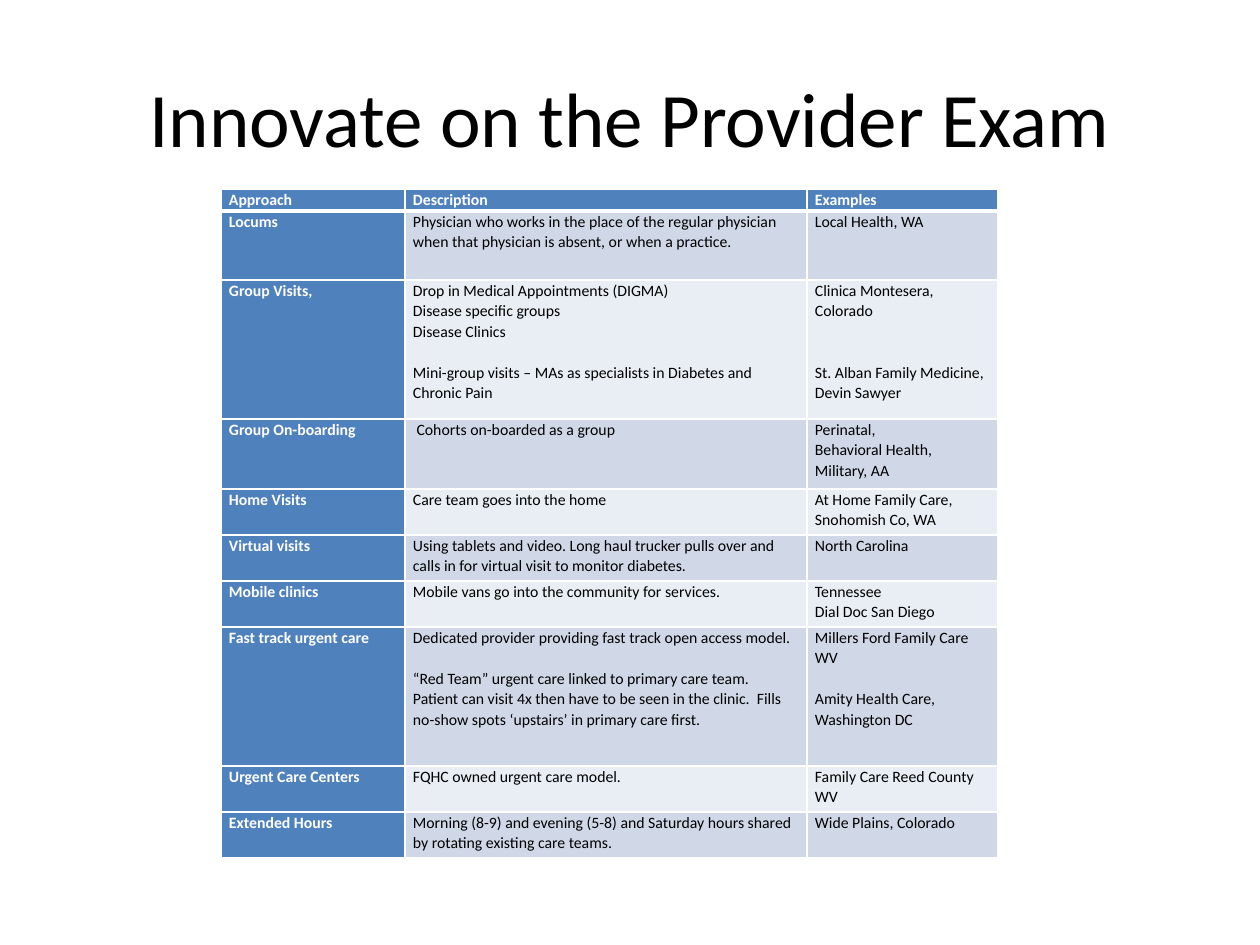
from lxml import etree
from pptx import Presentation
from pptx import util as u
from pptx.dml.color import RGBColor
from pptx.enum import text
from pptx.oxml import ns

TITLE = "Innovate on the Provider Exam"
HEADINGS = ["Approach", "Description", "Examples"]
# Each approach: name, description paragraphs, example paragraphs.
# A (text, lines) pair leaves that many lines free above the paragraph.
APPROACHES = [
    ("Locums",
     ["Physician who works in the place of the regular physician when that "
      "physician is absent, or when a practice."],
     ["Local Health, WA"]),
    ("Group Visits,",
     ["Drop in Medical Appointments (DIGMA)", "Disease specific groups", "Disease Clinics",
      ("Mini-group visits – MAs as specialists in Diabetes and Chronic Pain", 1)],
     ["Clinica Montesera, Colorado", ("St. Alban Family Medicine, Devin Sawyer", 2)]),
    ("Group On-boarding",
     [" Cohorts on-boarded as a group"],
     ["Perinatal,", "Behavioral Health,", "Military, AA"]),
    ("Home Visits",
     ["Care team goes into the home"],
     ["At Home Family Care, Snohomish Co, WA"]),
    ("Virtual visits",
     ["Using tablets and video. Long haul trucker pulls over and "
      "calls in for virtual visit to monitor diabetes."],
     ["North Carolina"]),
    ("Mobile clinics",
     ["Mobile vans go into the community for services."],
     ["Tennessee", "Dial Doc San Diego"]),
    ("Fast track urgent care",
     ["Dedicated provider providing fast track open access model.",
      ("“Red Team” urgent care linked to primary care team.  Patient can visit 4x "
       "then have to be seen in the clinic.  Fills no-show spots ‘upstairs’ in "
       "primary care first.", 1)],
     ["Millers Ford Family Care WV", ("Amity Health Care, Washington DC", 1)]),
    ("Urgent Care Centers",
     ["FQHC owned urgent care model."],
     ["Family Care Reed County WV"]),
    ("Extended Hours",
     ["Morning (8-9) and evening (5-8) and Saturday hours shared by rotating "
      "existing care teams."],
     ["Wide Plains, Colorado"]),
]

COLUMN_WIDTHS = [184, 402, 191]
ROW_HEIGHTS = [22, 69, 139, 70, 46, 46, 46, 139, 46, 46]
TABLE_LEFT, TABLE_TOP = 221, 189
TITLE_BOX = (63, 38, 1134, 158)
CELL_MARGIN = 8
LINE_POINTS = 11.75

FONT = "Calibri"
BLACK = RGBColor(0x00, 0x00, 0x00)
WHITE = RGBColor(0xFF, 0xFF, 0xFF)
BLUE = RGBColor(0x4F, 0x81, 0xBD)
BANDS = [RGBColor(0xD0, 0xD8, 0xE8), RGBColor(0xE9, 0xED, 0xF4)]


def px(length):
    return u.Emu(round(length * 914400 / 126))


def set_font(paragraph, size, color, bold=False):
    font = paragraph.font
    font.name, font.size, font.bold = FONT, u.Pt(size), bold
    font.color.rgb = color


def add_borders(cell, bottom):
    properties = cell._tc.get_or_add_tcPr()
    widths = {"lnL": 1, "lnR": 1, "lnT": 1, "lnB": bottom}
    for place, (tag, width) in enumerate(widths.items()):
        line = etree.Element(ns.qn(f"a:{tag}"), w=str(u.Pt(width)))
        fill = etree.SubElement(line, ns.qn("a:solidFill"))
        etree.SubElement(fill, ns.qn("a:srgbClr"), val=str(WHITE))
        properties.insert(place, line)


def fill_cell(cell, paragraphs, row, column):
    is_heading = row == 0 or column == 0
    cell.margin_left = cell.margin_right = px(CELL_MARGIN)
    cell.margin_top = cell.margin_bottom = 0
    cell.fill.solid()
    cell.fill.fore_color.rgb = BLUE if is_heading else BANDS[(row - 1) % 2]
    add_borders(cell, bottom=3 if row == 0 else 1)
    for index, entry in enumerate(paragraphs):
        wording, gap = entry if isinstance(entry, tuple) else (entry, 0)
        frame = cell.text_frame
        para = frame.add_paragraph() if index else frame.paragraphs[0]
        para.text = wording
        para.line_spacing = 1.07
        para.space_before = u.Pt(gap * LINE_POINTS)
        set_font(para, 9, WHITE if is_heading else BLACK, is_heading)


def add_title(page):
    title = page.shapes.title
    title.left, title.top, title.width, title.height = map(px, TITLE_BOX)
    title.text_frame.text = TITLE
    title.text_frame.vertical_anchor = text.MSO_ANCHOR.MIDDLE
    para = title.text_frame.paragraphs[0]
    para.alignment = text.PP_ALIGN.CENTER
    set_font(para, 44, BLACK)


def add_approaches(page):
    rows = [[[heading] for heading in HEADINGS]]
    rows += [[[name], description, examples] for name, description, examples in APPROACHES]
    table = page.shapes.add_table(
        len(rows), len(HEADINGS), px(TABLE_LEFT), px(TABLE_TOP),
        px(sum(COLUMN_WIDTHS)), px(sum(ROW_HEIGHTS))).table
    table.first_col = True
    for column, width in zip(table.columns, COLUMN_WIDTHS):
        column.width = px(width)
    for row, height in zip(table.rows, ROW_HEIGHTS):
        row.height = px(height)
    for r, cells in enumerate(rows):
        for c, paragraphs in enumerate(cells):
            fill_cell(table.cell(r, c), paragraphs, r, c)


def main():
    deck = Presentation()
    deck.slide_width, deck.slide_height = px(1260), px(945)
    page = deck.slides.add_slide(deck.slide_layouts[5])
    add_title(page)
    add_approaches(page)
    deck.save("out.pptx")


if __name__ == "__main__":
    main()
